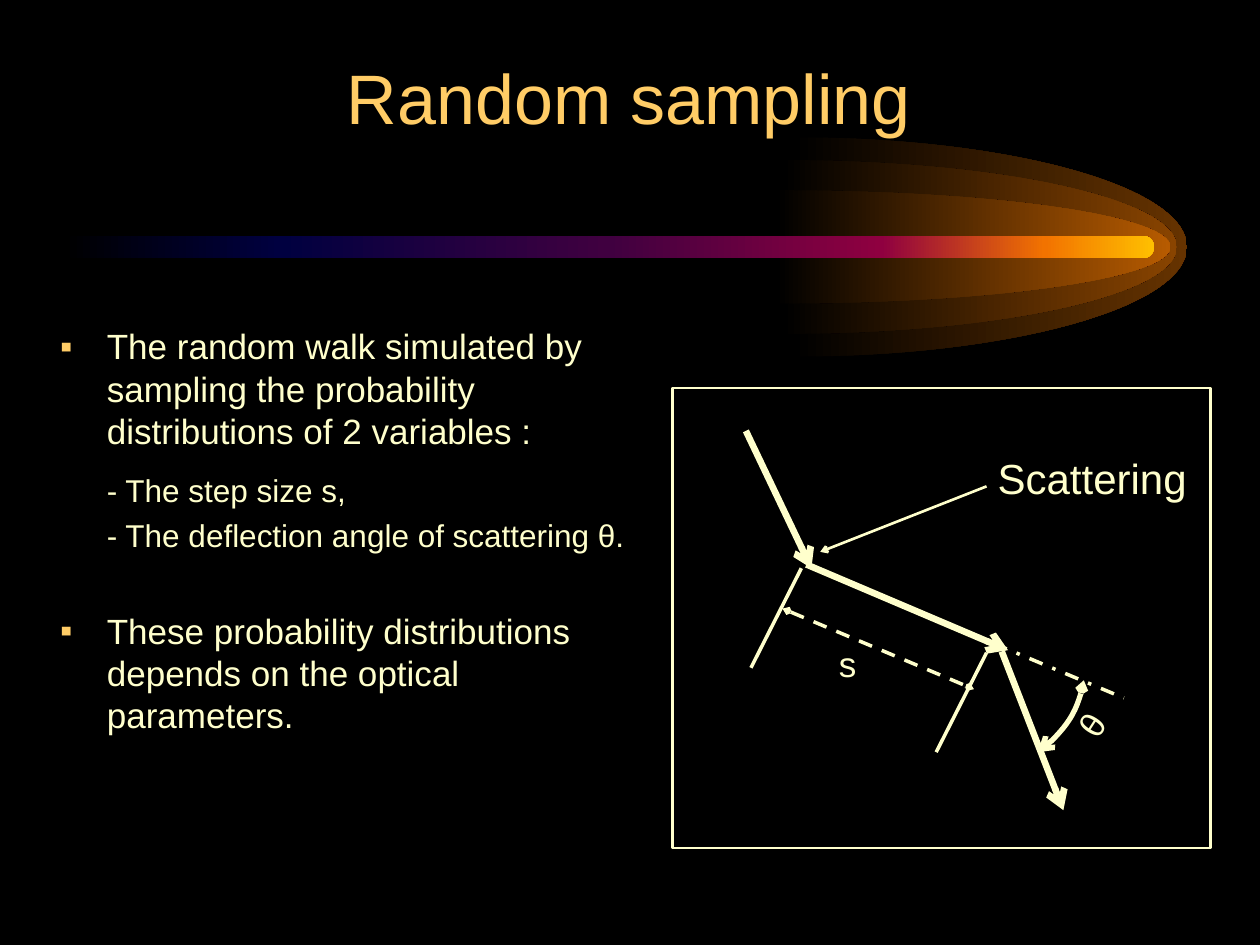
from lxml import etree
from pptx import Presentation
from pptx.dml.color import RGBColor
from pptx.enum import dml, shapes, text
from pptx.oxml.ns import qn
from pptx.util import Inches, Pt

BLACK = RGBColor(0x00, 0x00, 0x00)
CREAM = RGBColor(0xFF, 0xFF, 0xCC)
GOLD = RGBColor(0xFF, 0xCC, 0x66)
FLAME_DARK = RGBColor(0x66, 0x33, 0x00)
FLAME_MID = RGBColor(0x89, 0x44, 0x00)
FLAME_BRIGHT = RGBColor(0xB7, 0x5B, 0x00)
NAVY = RGBColor(0x00, 0x00, 0x40)
PURPLE = RGBColor(0x40, 0x00, 0x40)
CRIMSON = RGBColor(0x8F, 0x00, 0x40)
ORANGE = RGBColor(0xF2, 0x73, 0x00)
AMBER = RGBColor(0xFF, 0xBF, 0x00)

FONT = "Arial"
COMET_MIDDLE = 1.96
FLAME_LENGTH = 3.13
CURVE = 0.55


def fill_gradient(shape, stops):
    shape.shadow.inherit = False
    shape.line.fill.background()
    shape.fill.gradient()
    shape.fill.gradient_angle = 0
    stop_list = shape._element.spPr.find(qn("a:gradFill")).find(qn("a:gsLst"))
    for old_stop in list(stop_list):
        stop_list.remove(old_stop)
    for position, color in stops:
        stop = etree.SubElement(stop_list, qn("a:gs"), pos=str(position * 1000))
        etree.SubElement(stop, qn("a:srgbClr"), val=str(color))


def curve_segments(shape):
    segments = list(shape._element.spPr.iter(qn("a:lnTo")))
    for index in range(0, len(segments), 3):
        curve = etree.Element(qn("a:cubicBezTo"))
        segments[index].addprevious(curve)
        for segment in segments[index:index + 3]:
            curve.append(segment[0])
            segment.getparent().remove(segment)


def add_flame(slide, left, half_height, color):
    half_ellipse = [(0, -1), (CURVE, -1), (1, -CURVE), (1, 0),
                    (1, CURVE), (CURVE, 1), (0, 1)]
    points = [
        (Inches(left + FLAME_LENGTH * x), Inches(COMET_MIDDLE + half_height * y))
        for x, y in half_ellipse
    ]
    builder = slide.shapes.build_freeform(*points[0])
    builder.add_line_segments(points[1:], close=True)
    flame = builder.convert_to_shape()
    curve_segments(flame)
    fill_gradient(flame, [(0, BLACK), (100, color)])


def add_comet(slide):
    add_flame(slide, 6.29, 0.87, FLAME_DARK)
    add_flame(slide, 6.21, 0.69, FLAME_MID)
    add_flame(slide, 6.16, 0.45, FLAME_BRIGHT)
    bar = slide.shapes.add_shape(
        shapes.MSO_SHAPE.ROUNDED_RECTANGLE,
        Inches(0.5), Inches(1.87), Inches(8.66), Inches(0.18),
    )
    bar.adjustments[0] = 0.5
    fill_gradient(bar, [(0, BLACK), (20, NAVY), (50, PURPLE),
                        (75, CRIMSON), (90, ORANGE), (100, AMBER)])


def style_paragraph(para, size, color=CREAM):
    para.font.name = FONT
    para.font.size = Pt(size)
    para.font.color.rgb = color


def add_text_box(slide, left, top, width, height):
    box = slide.shapes.add_textbox(Inches(left), Inches(top), Inches(width), Inches(height))
    box.text_frame.word_wrap = True
    return box


def add_label(slide, wording, left, top, width, height, size, color=CREAM):
    box = add_text_box(slide, left, top, width, height)
    para = box.text_frame.paragraphs[0]
    para.text = wording
    style_paragraph(para, size, color)
    return box


def indent_paragraph(para, bullet):
    properties = para._p.get_or_add_pPr()
    margin = Inches(0.37)
    properties.set("marL", str(margin))
    properties.set("indent", str(-margin if bullet else 0))
    if bullet:
        color = etree.SubElement(properties, qn("a:buClr"))
        etree.SubElement(color, qn("a:srgbClr"), val=str(GOLD))
        etree.SubElement(properties, qn("a:buFont"), typeface=FONT)
        etree.SubElement(properties, qn("a:buChar"), char="▪")


def add_body(slide):
    items = [
        ("The random walk simulated by sampling the probability "
         "distributions of 2 variables :", True, 0),
        ("- The step size s,", False, 11.4),
        ("- The deflection angle of scattering θ.", False, 4.4),
        ("These probability distributions depends on the optical parameters.", True, 31.4),
    ]
    frame = add_text_box(slide, 0.38, 2.53, 4.77, 3.69).text_frame
    for index, (wording, bullet, space) in enumerate(items):
        para = frame.add_paragraph() if index else frame.paragraphs[0]
        para.text = wording
        para.space_before = Pt(space)
        if bullet:
            para.line_spacing = Pt(24)
        indent_paragraph(para, bullet)
        style_paragraph(para, 20 if bullet else 18)


def style_line(shape, width, dash=None, **ends):
    shape.line.color.rgb = CREAM
    shape.line.width = Pt(width)
    if dash:
        shape.line.dash_style = dash
    outline = shape.line._get_or_add_ln()
    for end, size in ends.items():
        etree.SubElement(outline, qn(f"a:{end}End"), type="arrow", w=size, len=size)


def add_line(slide, start, finish, width, dash=None, **ends):
    line = slide.shapes.add_connector(
        shapes.MSO_CONNECTOR.STRAIGHT, *map(Inches, start + finish)
    )
    style_line(line, width, dash, **ends)
    etree.SubElement(line._element.spPr, qn("a:effectLst"))


def add_outline(slide, kind, left, top, width, height, line_width, **ends):
    shape = slide.shapes.add_shape(
        kind, Inches(left), Inches(top), Inches(width), Inches(height)
    )
    shape.fill.background()
    style_line(shape, line_width, **ends)
    shape.shadow.inherit = False
    return shape


def add_scattering_diagram(slide):
    for start, finish in [((5.92, 3.42), (6.44, 4.51)),
                          ((6.4, 4.48), (8, 5.16)),
                          ((7.95, 5.17), (8.44, 6.43))]:
        add_line(slide, start, finish, 3.75, tail="med")
    add_line(slide, (7.32, 4.87), (8.92, 5.54), 2, dml.MSO_LINE.DASH_DOT)
    for start, finish in [((6.36, 4.51), (5.96, 5.3)), ((7.83, 5.18), (7.43, 5.97))]:
        add_line(slide, start, finish, 2)
    add_line(slide, (6.21, 4.83), (7.73, 5.47), 2, dml.MSO_LINE.DASH, head="sm", tail="sm")
    add_line(slide, (6.51, 4.38), (7.83, 3.86), 1.5, head="sm")

    add_label(slide, "Scattering", 7.82, 3.54, 1.77, 0.5, 24)
    add_label(slide, "s", 6.56, 5.05, 0.39, 0.44, 20)
    add_label(slide, "θ", 8.48, 5.52, 0.39, 0.44, 20).rotation = 302.8

    angle_arc = add_outline(slide, shapes.MSO_SHAPE.ARC, 6.55, 4.11, 1.9, 2.23, 3,
                            head="sm", tail="med")
    angle_arc.adjustments[0] = 162
    angle_arc.adjustments[1] = 183.82
    angle_arc.rotation = 99
    add_outline(slide, shapes.MSO_SHAPE.RECTANGLE, 5.34, 3.08, 4.27, 3.65, 1.5)


def main():
    deck = Presentation()
    deck.slide_width = Inches(10)
    deck.slide_height = Inches(7.5)
    slide = deck.slides.add_slide(deck.slide_layouts[6])
    slide.background.fill.solid()
    slide.background.fill.fore_color.rgb = BLACK

    add_comet(slide)
    title = add_label(slide, "Random sampling", 0.74, 0.34, 8.5, 0.81, 40, GOLD)
    title.text_frame.vertical_anchor = text.MSO_ANCHOR.BOTTOM
    title.text_frame.paragraphs[0].alignment = text.PP_ALIGN.CENTER
    add_body(slide)
    add_scattering_diagram(slide)
    deck.save("out.pptx")


if __name__ == "__main__":
    main()
